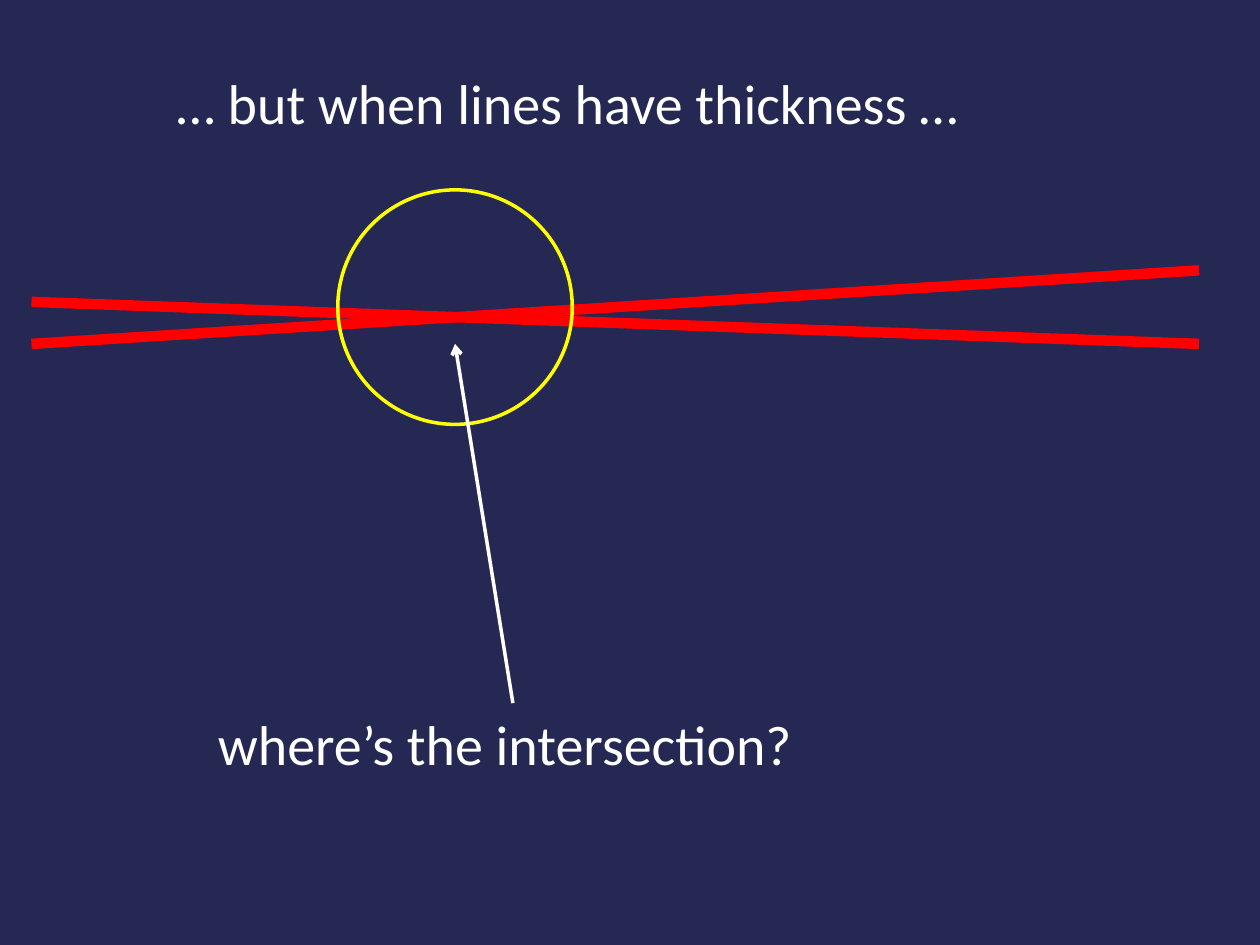
from lxml.etree import SubElement
from pptx import Presentation
from pptx.dml.color import RGBColor
from pptx.enum.shapes import MSO_CONNECTOR, MSO_SHAPE
from pptx.enum.text import MSO_ANCHOR, MSO_AUTO_SIZE, PP_ALIGN
from pptx.oxml.ns import qn
from pptx.util import Pt

COLORS = {"background": "242852", "thick": "FF0000", "circle": "FFFF00", "text": "FFFFFF"}


def write_caption(box, text, left, top, width, height):
    box.left, box.top, box.width, box.height = Pt(left), Pt(top), Pt(width), Pt(height)
    frame = box.text_frame
    frame.text = text
    frame.word_wrap = False
    frame.auto_size = MSO_AUTO_SIZE.SHAPE_TO_FIT_TEXT
    frame.vertical_anchor = MSO_ANCHOR.TOP
    paragraph = frame.paragraphs[0]
    paragraph.alignment = PP_ALIGN.LEFT
    paragraph.line_spacing = 1.0
    paragraph.space_before = Pt(0)
    paragraph.font.name = "Calibri"
    paragraph.font.size = Pt(32)
    paragraph.font.color.rgb = RGBColor.from_string(COLORS["text"])


def draw_line(start, end, color, weight):
    line = slide.shapes.add_connector(MSO_CONNECTOR.STRAIGHT, *map(Pt, start + end))
    line.line.color.rgb = RGBColor.from_string(COLORS[color])
    line.line.width = Pt(weight)
    SubElement(line._element.spPr, qn("a:effectLst"))
    return line


presentation = Presentation()
presentation.slide_width, presentation.slide_height = Pt(720), Pt(540)
slide = presentation.slides.add_slide(presentation.slide_layouts[5])
slide.background.fill.solid()
slide.background.fill.fore_color.rgb = RGBColor.from_string(COLORS["background"])

write_caption(slide.shapes.title, "… but when lines have thickness …", 93.6, 35.3, 465.8, 46)

for left_y, right_y in [(196.5, 154.5), (172.5, 196.5)]:
    draw_line((18, left_y), (685.2, right_y), "thick", 6)

circle = slide.shapes.add_shape(MSO_SHAPE.OVAL, Pt(193), Pt(108.5), Pt(134), Pt(134))
circle.shadow.inherit = False
circle.fill.background()
circle.line.color.rgb = RGBColor.from_string(COLORS["circle"])
circle.line.width = Pt(2)

question = slide.shapes.add_textbox(0, 0, 0, 0)
write_caption(question, "where’s the intersection?", 117.4, 401.8, 351.4, 46)

pointer = draw_line((293, 401.8), (260, 196.5), "text", 2)
pointer.begin_connect(question, 0)
SubElement(pointer.line._get_or_add_ln(), qn("a:tailEnd"), type="arrow")

presentation.save("out.pptx")
